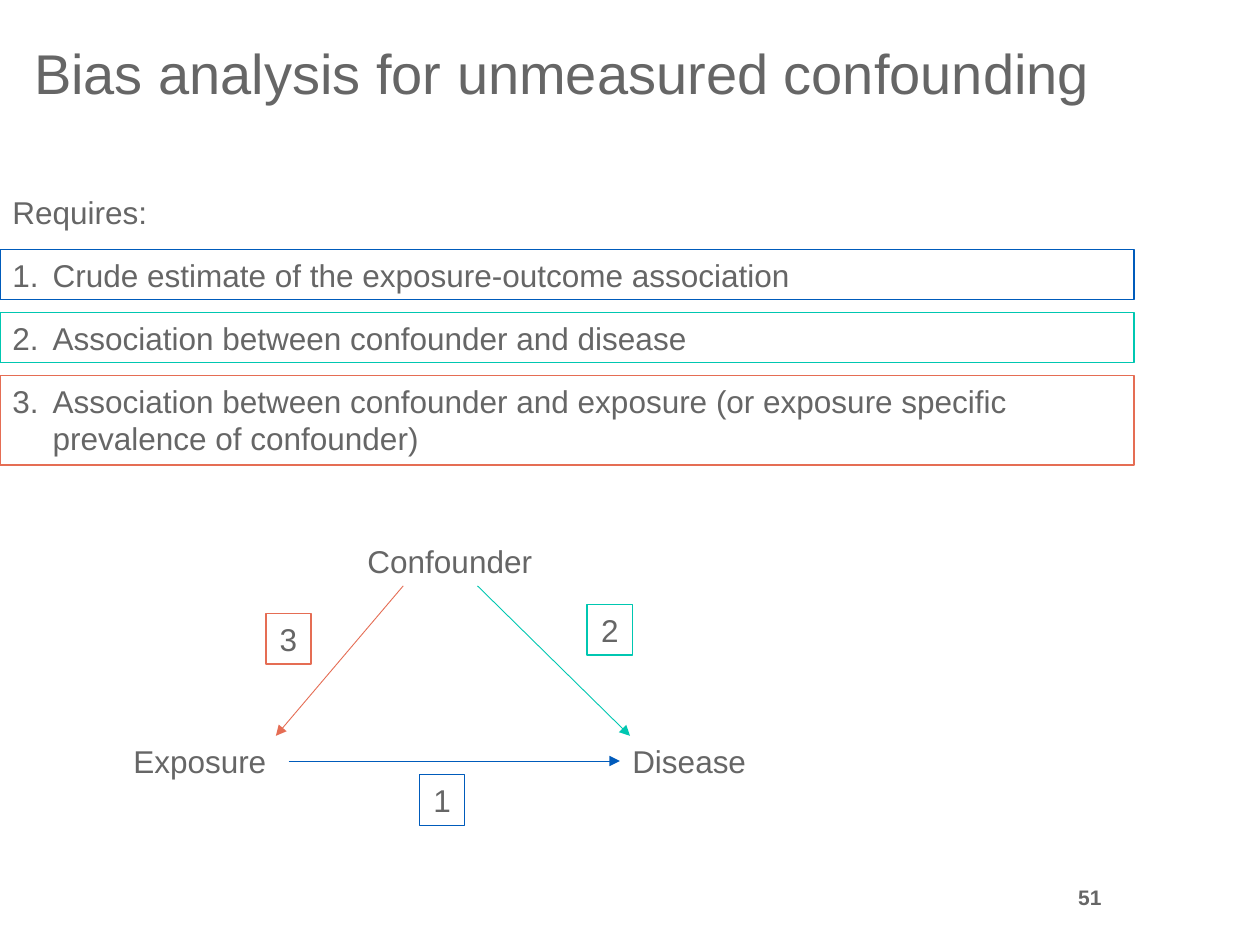
"""Build a slide on bias analysis: three requirements keyed to a causal triangle."""
from typing import NamedTuple, Optional

from lxml import etree
from pptx import Presentation
from pptx import util as u
from pptx.dml.color import RGBColor
from pptx.enum import shapes, text
from pptx.oxml.ns import qn

COLUMNS, ROWS = 100, 75
FONT, GREY, WHITE = "Arial", "666666", "FFFFFF"
BLUE, TEAL, CORAL = "005BBB", "00C7B1", "E56D54"
LEFT, CENTER, RIGHT = text.PP_ALIGN.LEFT, text.PP_ALIGN.CENTER, text.PP_ALIGN.RIGHT
LINE_ROWS = 4
ITEM_PITCH = 5


class Area(NamedTuple):
    column: float
    row: float
    columns: float
    rows: float = LINE_ROWS


class Outline(NamedTuple):
    color: str
    points: float = 0.75
    fill: Optional[str] = None


class Requirement(NamedTuple):
    wording: str
    outline: Outline
    rows: float
    badge: Area


class Node(NamedTuple):
    wording: str
    area: Area
    align: text.PP_ALIGN = LEFT


class Arrow(NamedTuple):
    start: tuple[float, float]
    end: tuple[float, float]
    color: str


REQUIREMENTS = [
    Requirement("Crude estimate of the exposure-outcome association",
                Outline(BLUE), LINE_ROWS, Area(33.3, 61.5, 3.6)),
    Requirement("Association between confounder and disease",
                Outline(TEAL), LINE_ROWS, Area(46.6, 48, 3.6)),
    Requirement("Association between confounder and exposure "
                "(or exposure specific prevalence of confounder)",
                Outline(CORAL, 1, WHITE), 7.1, Area(21.1, 48.7, 3.6)),
]
NODES = [
    Node("Confounder", Area(26.4, 42.5, 18.6), CENTER),
    Node("Exposure", Area(9.6, 58.4, 13.3)),
    Node("Disease", Area(49.2, 58.4, 13.3)),
]
ARROWS = [
    Arrow((32, 46.5), (21.9, 58.4), CORAL),
    Arrow((37.9, 46.5), (50, 58.4), TEAL),
    Arrow((22.9, 60.4), (49.2, 60.4), BLUE),
]

deck = Presentation()
deck.slide_width, deck.slide_height = u.Inches(10), u.Inches(7.5)


def rgb(value: str) -> RGBColor:
    """Turn a hex string into a colour."""
    return RGBColor.from_string(value)


def across(columns: float) -> int:
    """Turn grid columns into a length."""
    return round(deck.slide_width * columns / COLUMNS)


def down(rows: float) -> int:
    """Turn grid rows into a length."""
    return round(deck.slide_height * rows / ROWS)


def place(area: Area) -> tuple[int, int, int, int]:
    """Give the left, top, width and height of a grid area."""
    return across(area.column), down(area.row), across(area.columns), down(area.rows)


def write(box, wording: str, size: float = 18, align=LEFT,
          anchor=text.MSO_ANCHOR.TOP, bold: bool = False):
    """Set and format the single paragraph of a box and return it."""
    frame = box.text_frame
    frame.word_wrap = True
    frame.vertical_anchor = anchor
    frame.text = wording
    para = frame.paragraphs[0]
    para.alignment = align
    for span in para.runs:
        span.font.name, span.font.size, span.font.bold = FONT, u.Pt(size), bold
        span.font.color.rgb = rgb(GREY)
    return para


def add_label(page, area: Area, wording: str, **style) -> None:
    """Add plain text."""
    write(page.shapes.add_textbox(*place(area)), wording, **style)


def add_frame(page, area: Area, outline: Outline, wording: str, align=LEFT):
    """Add text in an outlined rectangle and return its paragraph."""
    box = page.shapes.add_shape(shapes.MSO_SHAPE.RECTANGLE, *place(area))
    box.shadow.inherit = False
    box.line.color.rgb = rgb(outline.color)
    box.line.width = u.Pt(outline.points)
    if outline.fill:
        box.fill.solid()
        box.fill.fore_color.rgb = rgb(outline.fill)
    else:
        box.fill.background()
    return write(box, wording, align=align)


def add_requirement(page, number: int, item: Requirement) -> None:
    """Add a numbered requirement and its badge in the triangle."""
    area = Area(0, 14.8 + ITEM_PITCH * number, 90, item.rows)
    para = add_frame(page, area, item.outline, f"{number}.\t{item.wording}")
    properties = para._p.get_or_add_pPr()
    properties.set("marL", str(across(3.2)))
    properties.set("indent", str(-across(3.2)))
    add_frame(page, item.badge, item.outline, str(number), CENTER)


def add_arrow(page, arrow: Arrow) -> None:
    """Add a thin line with a triangular head at its end."""
    (x1, y1), (x2, y2) = arrow.start, arrow.end
    line = page.shapes.add_connector(shapes.MSO_CONNECTOR.STRAIGHT,
                                     across(x1), down(y1), across(x2), down(y2))
    line.line.color.rgb = rgb(arrow.color)
    line.line.width = u.Pt(0.5)
    etree.SubElement(line.line._get_or_add_ln(), qn("a:tailEnd"), type="triangle")
    etree.SubElement(line._element.spPr, qn("a:effectLst"))


def main() -> None:
    """Draw the slide and save it."""
    page = deck.slides.add_slide(deck.slide_layouts[5])
    title = page.shapes.title
    title.left, title.top, title.width, title.height = place(Area(1.7, 2.5, 89.9, 6.4))
    write(title, "Bias analysis for unmeasured confounding", size=32,
          anchor=text.MSO_ANCHOR.BOTTOM)
    add_label(page, Area(0, 14.8, 90), "Requires:")
    for number, item in enumerate(REQUIREMENTS, 1):
        add_requirement(page, number, item)
    for node in NODES:
        add_label(page, node.area, node.wording, align=node.align)
    for arrow in ARROWS:
        add_arrow(page, arrow)
    add_label(page, Area(82.5, 68.3, 5.9, 5.8), "51", size=12, align=RIGHT,
              anchor=text.MSO_ANCHOR.MIDDLE, bold=True)
    deck.save("out.pptx")


if __name__ == "__main__":
    main()
